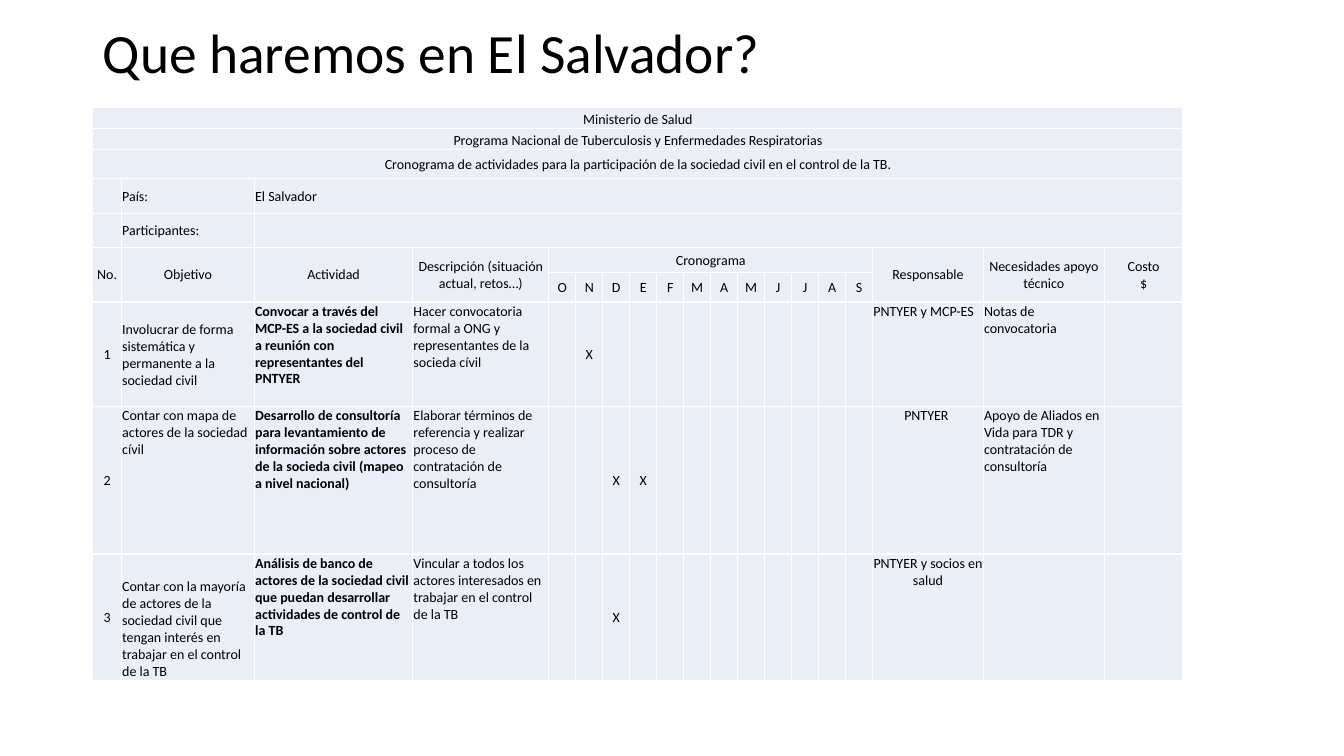
"""Build the slide with the El Salvador activity schedule."""
from lxml.etree import SubElement
from pptx import Presentation
from pptx.dml.color import RGBColor
from pptx.enum.text import MSO_ANCHOR, PP_ALIGN
from pptx.oxml.ns import qn
from pptx.util import Cm, Pt

BLACK = RGBColor(0x00, 0x00, 0x00)
PALE_BLUE = RGBColor(0xEA, 0xEF, 0xF7)
FONT = "Calibri"
LEFT, CENTER = PP_ALIGN.LEFT, PP_ALIGN.CENTER
TOP, MIDDLE, BOTTOM = MSO_ANCHOR.TOP, MSO_ANCHOR.MIDDLE, MSO_ANCHOR.BOTTOM

MONTHS = "ONDEFMAMJJAS"
FIRST_MONTH = 4
RESPONSIBLE, NEEDS, COST = 16, 17, 18
COLUMN_WIDTHS = [0.72, 3.35, 3.99, 3.43] + [0.68] * len(MONTHS) + [2.79, 3.05, 1.98]
ROW_HEIGHTS = [0.53, 0.53, 0.74, 0.89, 0.84, 0.64, 0.74, 2.64, 3.71, 3.18]
HEADER_ROW, MONTH_ROW, FIRST_ACTIVITY_ROW = 5, 6, 7

BANNERS = [
    ("Ministerio de Salud", BOTTOM),
    ("Programa Nacional de Tuberculosis y Enfermedades Respiratorias", BOTTOM),
    ("Cronograma de actividades para la participación de la sociedad civil "
     "en el control de la TB.", MIDDLE),
]
DETAILS = [("País:", "El Salvador"), ("Participantes:", "")]
HEADERS = {
    0: "No.",
    1: "Objetivo",
    2: "Actividad",
    3: "Descripción (situación actual, retos…)",
    RESPONSIBLE: "Responsable",
    NEEDS: "Necesidades apoyo técnico",
    COST: "Costo\n$",
}
ACTIVITIES = [
    ("Involucrar de forma sistemática y permanente a la sociedad civil", MIDDLE,
     "Convocar a través del MCP-ES a la sociedad civil a reunión con representantes del PNTYER",
     "Hacer convocatoria formal a ONG y representantes de la socieda cívil",
     [1], "PNTYER y MCP-ES", LEFT, "Notas de convocatoria"),
    ("Contar con mapa de actores de la sociedad cívil", TOP,
     "Desarrollo de consultoría para levantamiento de información sobre actores "
     "de la socieda civil (mapeo a nivel nacional)",
     "Elaborar términos de referencia y realizar proceso de contratación de consultoría",
     [2, 3], "PNTYER ", CENTER,
     "Apoyo de Aliados en Vida para TDR y contratación de consultoría"),
    ("Contar con la mayoría de actores de la sociedad civil que tengan interés "
     "en trabajar en el control de la TB", BOTTOM,
     "Análisis de banco de actores de la sociedad civil que puedan desarrollar "
     "actividades de control de la TB",
     "Vincular a todos los actores interesados en trabajar en el control de la TB",
     [2], "PNTYER y socios en salud", CENTER, ""),
]


def add_run(paragraph, text, size, bold=False):
    run = paragraph.add_run()
    run.text = text
    run.font.name = FONT
    run.font.size = Pt(size)
    run.font.bold = bold
    run.font.color.rgb = BLACK


def write_cell(row, column, text, alignment=CENTER, anchor=MIDDLE, bold=False):
    cell = table.cell(row, column)
    cell.vertical_anchor = anchor
    paragraph = cell.text_frame.paragraphs[0]
    paragraph.alignment = alignment
    for index, line in enumerate(text.splitlines()):
        if index:
            paragraph.add_line_break()
        add_run(paragraph, line, 10, bold)


presentation = Presentation()
presentation.slide_width = Cm(33.87)
presentation.slide_height = Cm(19.05)
slide = presentation.slides.add_slide(presentation.slide_layouts[5])

title = slide.shapes.title
title.left, title.top, title.width, title.height = Cm(2.34), Cm(1.02), Cm(29.21), Cm(0.74)
title.text_frame.vertical_anchor = MIDDLE
title_paragraph = title.text_frame.paragraphs[0]
title_paragraph.alignment = LEFT
title_paragraph.line_spacing = 0.9
add_run(title_paragraph, "Que haremos en El Salvador?", 39.6)

table = slide.shapes.add_table(
    len(ROW_HEIGHTS), len(COLUMN_WIDTHS), Cm(2.34), Cm(2.7),
    Cm(sum(COLUMN_WIDTHS)), Cm(sum(ROW_HEIGHTS))).table
table.first_row = False
table.horz_banding = False
for column, width in zip(table.columns, COLUMN_WIDTHS):
    column.width = Cm(width)
for row, height in zip(table.rows, ROW_HEIGHTS):
    row.height = Cm(height)

for cell in table.iter_cells():
    cell.fill.solid()
    cell.fill.fore_color.rgb = PALE_BLUE
    cell.margin_left = cell.margin_right = cell.margin_top = Cm(0.02)
    cell.margin_bottom = Cm(0)

for row, (text, anchor) in enumerate(BANNERS):
    table.cell(row, 0).merge(table.cell(row, COST))
    write_cell(row, 0, text, anchor=anchor)

for row, (label, value) in enumerate(DETAILS, len(BANNERS)):
    table.cell(row, 2).merge(table.cell(row, COST))
    write_cell(row, 1, label, LEFT)
    write_cell(row, 2, value, LEFT)

for column, text in HEADERS.items():
    table.cell(HEADER_ROW, column).merge(table.cell(MONTH_ROW, column))
    write_cell(HEADER_ROW, column, text)
table.cell(HEADER_ROW, FIRST_MONTH).merge(table.cell(HEADER_ROW, RESPONSIBLE - 1))
write_cell(HEADER_ROW, FIRST_MONTH, "Cronograma")
for column, month in enumerate(MONTHS, FIRST_MONTH):
    write_cell(MONTH_ROW, column, month)

for number, activity in enumerate(ACTIVITIES, 1):
    goal, goal_anchor, action, description, months, responsible, alignment, needs = activity
    row = FIRST_ACTIVITY_ROW + number - 1
    write_cell(row, 0, str(number))
    write_cell(row, 1, goal, LEFT, goal_anchor)
    write_cell(row, 2, action, LEFT, TOP, bold=True)
    write_cell(row, 3, description, LEFT, TOP)
    for month in months:
        write_cell(row, FIRST_MONTH + month, "X")
    write_cell(row, RESPONSIBLE, responsible, alignment, TOP)
    write_cell(row, NEEDS, needs, LEFT, TOP)

for cell in table.iter_cells():
    paragraph = cell.text_frame.paragraphs[0]
    if not paragraph.runs:
        SubElement(paragraph._p, qn("a:endParaRPr"), sz="1000")

presentation.save("out.pptx")
